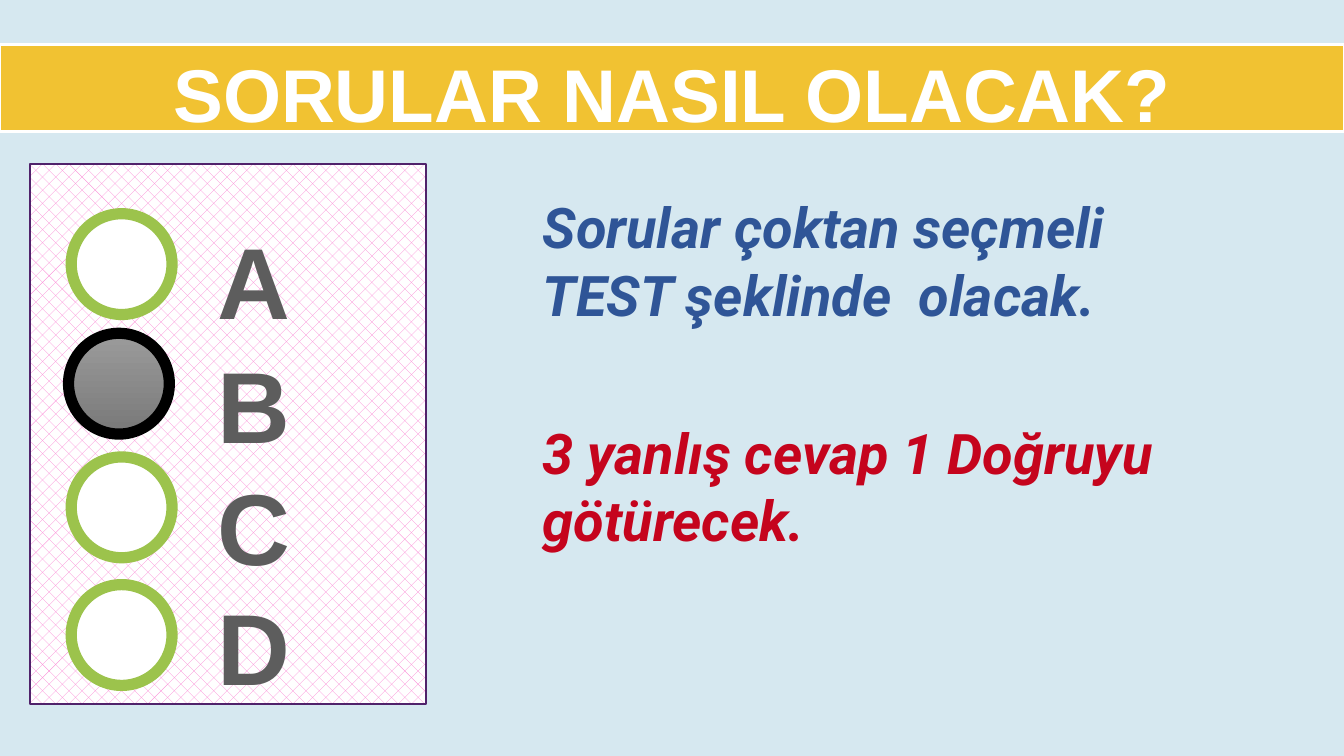
from dataclasses import dataclass

from pptx import Presentation
from pptx.dml.color import RGBColor
from pptx.enum.dml import MSO_PATTERN
from pptx.enum.shapes import MSO_SHAPE
from pptx.enum.text import MSO_ANCHOR, MSO_AUTO_SIZE, PP_ALIGN
from pptx.util import Inches, Pt


@dataclass(frozen=True)
class Theme:
    background: str = "D6E8F0"
    band: str = "F1C232"
    white: str = "FFFFFF"
    pink: str = "FB85D4"
    purple: str = "50226B"
    green: str = "9CC34C"
    black: str = "000000"
    grey: str = "5D5D5D"
    blue: str = "2F5597"
    red: str = "C5041D"
    marked: tuple = ("9B9B9B", "797979")
    heading_font: str = "Arial"
    body_font: str = "Roboto"
    title_size: int = 40
    letter_size: int = 54
    body_size: int = 30


THEME = Theme()


def rgb(value):
    return RGBColor.from_string(value)


def set_line(shape, color, width):
    shape.line.color.rgb = rgb(color)
    shape.line.width = Pt(width)


def add_run(p, text, font, size, color, italic=False):
    r = p.add_run()
    r.text = text
    r.font.name = font
    r.font.size = Pt(size)
    r.font.bold = True
    r.font.italic = italic
    r.font.color.rgb = rgb(color)


def add_title(s, text):
    sp = s.shapes.title
    sp.left, sp.top = Inches(0), Inches(0.33)
    sp.width, sp.height = Inches(10), Inches(0.65)
    sp.fill.solid()
    sp.fill.fore_color.rgb = rgb(THEME.band)
    set_line(sp, THEME.white, 1.5)
    tf = sp.text_frame
    tf.auto_size = MSO_AUTO_SIZE.NONE
    tf.vertical_anchor = MSO_ANCHOR.TOP
    tf.margin_top = tf.margin_bottom = Inches(0.1)
    p = tf.paragraphs[0]
    p.alignment = PP_ALIGN.CENTER
    p.line_spacing = 0.9
    add_run(p, text, THEME.heading_font, THEME.title_size, THEME.white)


def add_answer_panel(s):
    sp = s.shapes.add_shape(
        MSO_SHAPE.RECTANGLE, Inches(0.22), Inches(1.22), Inches(2.95), Inches(4.02)
    )
    sp.shadow.inherit = False
    sp.fill.patterned()
    sp.fill.pattern = MSO_PATTERN.PERCENT_30
    sp.fill.fore_color.rgb = rgb(THEME.pink)
    sp.fill.back_color.rgb = rgb(THEME.white)
    set_line(sp, THEME.purple, 1)


def add_bubble(s, left, top, marked):
    sp = s.shapes.add_shape(
        MSO_SHAPE.OVAL, Inches(left), Inches(top), Inches(0.75), Inches(0.75)
    )
    sp.shadow.inherit = False
    if marked:
        sp.fill.gradient()
        sp.fill.gradient_angle = 270
        for position, (stop, color) in enumerate(zip(sp.fill.gradient_stops, THEME.marked)):
            stop.color.rgb = rgb(color)
            stop.position = position
    else:
        sp.fill.solid()
        sp.fill.fore_color.rgb = rgb(THEME.white)
    set_line(sp, THEME.black if marked else THEME.green, 6)


def add_letter(s, text, top):
    sp = s.shapes.add_textbox(Inches(1.52), Inches(top), Inches(0.73), Inches(0.92))
    tf = sp.text_frame
    tf.word_wrap = False
    p = tf.paragraphs[0]
    p.alignment = PP_ALIGN.CENTER
    add_run(p, text, THEME.heading_font, THEME.letter_size, THEME.grey)


def add_statement(s, text, top, color):
    sp = s.shapes.add_textbox(Inches(3.94), Inches(top), Inches(5.32), Inches(1.11))
    tf = sp.text_frame
    tf.word_wrap = True
    tf.vertical_anchor = MSO_ANCHOR.MIDDLE
    add_run(tf.paragraphs[0], text, THEME.body_font, THEME.body_size, color, italic=True)


def main():
    prs = Presentation()
    prs.slide_width = Inches(10)
    prs.slide_height = prs.slide_width * 9 // 16
    s = prs.slides.add_slide(prs.slide_layouts[5])
    s.background.fill.solid()
    s.background.fill.fore_color.rgb = rgb(THEME.background)

    add_answer_panel(s)
    add_title(s, "SORULAR NASIL OLACAK?")
    options = [
        ("A", 0.53, 1.59, 1.58),
        ("B", 0.51, 2.48, 2.5),
        ("C", 0.53, 3.4, 3.41),
        ("D", 0.53, 4.35, 4.3),
    ]
    for letter, left, bubble_top, letter_top in options:
        add_bubble(s, left, bubble_top, marked=letter == "B")
        add_letter(s, letter, letter_top)
    add_statement(s, "Sorular çoktan seçmeli TEST şeklinde  olacak.", 1.38, THEME.blue)
    add_statement(s, "3 yanlış cevap 1 Doğruyu götürecek.", 3.06, THEME.red)
    prs.save("out.pptx")


if __name__ == "__main__":
    main()
